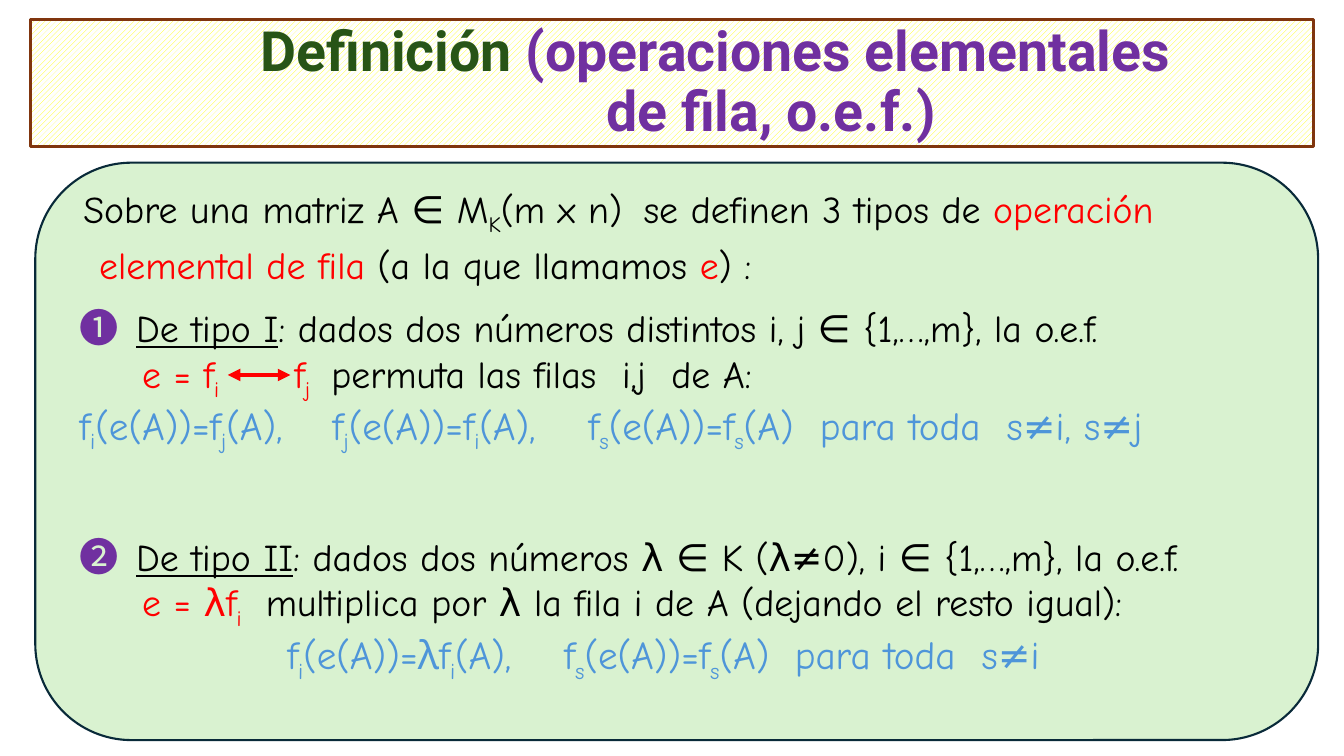
from pptx import Presentation, util as u
from pptx.dml.color import RGBColor
from pptx.enum import dml, shapes, text
from pptx.oxml.ns import qn
from lxml import etree

BODY, SYMBOL, HEAD = "Comic Neue", "Noto Sans CJK JP", "Roboto"
BLACK, RED, BLUE, PURPLE, GREEN = "000000", "FF0000", "4E95D9", "7030A0", "275417"

# Each title line: left indent in cm, then (colour, text) runs.
TITLE = [
    (2.2, [(GREEN, "Definición "), (PURPLE, "(operaciones elementales")]),
    (5.0, [(PURPLE, "de fila, o.e.f.)")]),
]

# Each line: size, tab stops in cm, then (colour, text) runs.
# Text between tildes is subscript, text between bars is underlined.
INTRO = [
    (27, [14.12], [(BLACK, "Sobre una matriz A ∈ M~K~(m x n)\tse definen 3 tipos de "),
                   (RED, "operación")]),
    (27, [0.4], [(RED, "\telemental de fila "), (BLACK, "(a la que llamamos "),
                 (RED, "e"), (BLACK, ") :")]),
]
TYPE_1 = [
    (27, [1.43], [(PURPLE, "➊"),
                  (BLACK, "\t|De tipo I|: dados dos números distintos i, j ∈ {1,…,m}, la o.e.f.")]),
    (27, [1.58, 5.42, 6.35, 13.68, 14.92],
     [(RED, "\te = f~i~\tf~j~"), (BLACK, "\tpermuta las filas\ti,j\tde A:")]),
]
RULE_1 = [
    (28, [6.38, 12.83, 18.66, 23.37],
     [(BLUE, "f~i~(e(A))=f~j~(A),\tf~j~(e(A))=f~i~(A),\tf~s~(e(A))=f~s~(A)"
             "\tpara toda\ts≠i, s≠j")]),
]
TYPE_2 = [
    (27, [1.43], [(PURPLE, "➋"),
                  (BLACK, "\t|De tipo II|: dados dos números λ ∈ K (λ≠0), i ∈ {1,…,m}, la o.e.f.")]),
    (27, [1.58, 4.7], [(RED, "\te = λf~i~"),
                       (BLACK, "\tmultiplica por λ la fila i de A (dejando el resto igual):")]),
    (28, [5.24, 12.22, 18.03, 22.74],
     [(BLUE, "\tf~i~(e(A))=λf~i~(A),\tf~s~(e(A))=f~s~(A)\tpara toda\ts≠i")]),
]
# Left, top, height, line spacing, space between lines, lines.
BLOCKS = [
    (1.85, 4.57, 3.0, 0.9, 10, INTRO),
    (1.75, 7.52, 2.6, 1, 0, TYPE_1),
    (1.75, 9.98, 1.4, 1, 0, RULE_1),
    (1.75, 13.28, 4.0, 1, 0, TYPE_2),
]
WIDTH = 30.8


def rgb(code):
    return RGBColor.from_string(code)


def add_run(para, words, code):
    run = para.add_run()
    run.text = words
    run.font.color.rgb = rgb(code)
    return run


def add_marked(para, code, words):
    """Add words, reading ~subscript~ and |underline| marks."""
    for i, part in enumerate(words.split("~")):
        for j, bit in enumerate(part.split("|")):
            if not bit:
                continue
            run = add_run(para, bit, code)
            if i % 2:
                run.font._element.set("baseline", "-25000")
            if j % 2:
                run.font.underline = True
            if code == PURPLE:
                run.font.name, run.font.size = SYMBOL, u.Pt(28)


def set_tabs(para, stops):
    props = para._p.get_or_add_pPr()
    tabs = etree.Element(qn("a:tabLst"))
    for stop in stops:
        etree.SubElement(tabs, qn("a:tab"), pos=str(u.Cm(stop)), algn="l")
    props.find(qn("a:defRPr")).addprevious(tabs)


def lines_of(frame, rows):
    """Yield a paragraph for each row."""
    for i, row in enumerate(rows):
        yield (frame.add_paragraph() if i else frame.paragraphs[0]), row


def add_block(slide, left, top, height, pitch, gap, rows):
    box = slide.shapes.add_textbox(u.Cm(left), u.Cm(top), u.Cm(WIDTH), u.Cm(height))
    box.text_frame.word_wrap = True
    for para, (size, stops, runs) in lines_of(box.text_frame, rows):
        para.line_spacing, para.space_before = pitch, u.Pt(gap)
        para.font.name, para.font.size = BODY, u.Pt(size)
        set_tabs(para, stops)
        for code, words in runs:
            add_marked(para, code, words)


def add_box(slide, kind, place, edge, weight):
    box = slide.shapes.add_shape(kind, *[u.Cm(n) for n in place])
    box.shadow.inherit = False
    box.line.color.rgb, box.line.width = rgb(edge), u.Pt(weight)
    return box


def add_title(slide):
    box = add_box(slide, shapes.MSO_SHAPE.RECTANGLE, (0.76, 0.5, 32.34, 3.2), "80350E", 2)
    box.fill.patterned()
    box.fill.pattern = dml.MSO_PATTERN.WIDE_UPWARD_DIAGONAL
    box.fill.fore_color.rgb, box.fill.back_color.rgb = rgb("FFFF00"), rgb("FFFFFF")
    frame = box.text_frame
    frame.word_wrap = True
    frame.vertical_anchor = text.MSO_ANCHOR.MIDDLE
    for para, (indent, runs) in lines_of(frame, TITLE):
        para.alignment, para.line_spacing = text.PP_ALIGN.CENTER, 0.9
        para.font.name, para.font.size, para.font.bold = HEAD, u.Pt(39.6), True
        para._p.get_or_add_pPr().set("marL", str(u.Cm(indent)))
        for code, words in runs:
            add_run(para, words, code)


def add_swap(slide):
    """Draw the two-headed arrow between the swapped rows."""
    line = slide.shapes.add_connector(
        shapes.MSO_CONNECTOR.STRAIGHT, u.Cm(5.74), u.Cm(9.45), u.Cm(7.32), u.Cm(9.45))
    line.line.color.rgb, line.line.width = rgb(RED), u.Pt(3)
    stroke = line.line._get_or_add_ln()
    for end in ("a:headEnd", "a:tailEnd"):
        etree.SubElement(stroke, qn(end), type="triangle")
    etree.SubElement(line._element.spPr, qn("a:effectLst"))


def main():
    deck = Presentation()
    deck.slide_width, deck.slide_height = u.Cm(33.87), u.Cm(19.05)
    slide = deck.slides.add_slide(deck.slide_layouts[6])
    panel = add_box(slide, shapes.MSO_SHAPE.ROUNDED_RECTANGLE,
                    (0.89, 4.1, 32.33, 14.55), "092A39", 1.5)
    panel.fill.solid()
    panel.fill.fore_color.rgb = rgb("D9F2D0")
    add_title(slide)
    for block in BLOCKS:
        add_block(slide, *block)
    add_swap(slide)
    deck.save("out.pptx")


if __name__ == "__main__":
    main()
